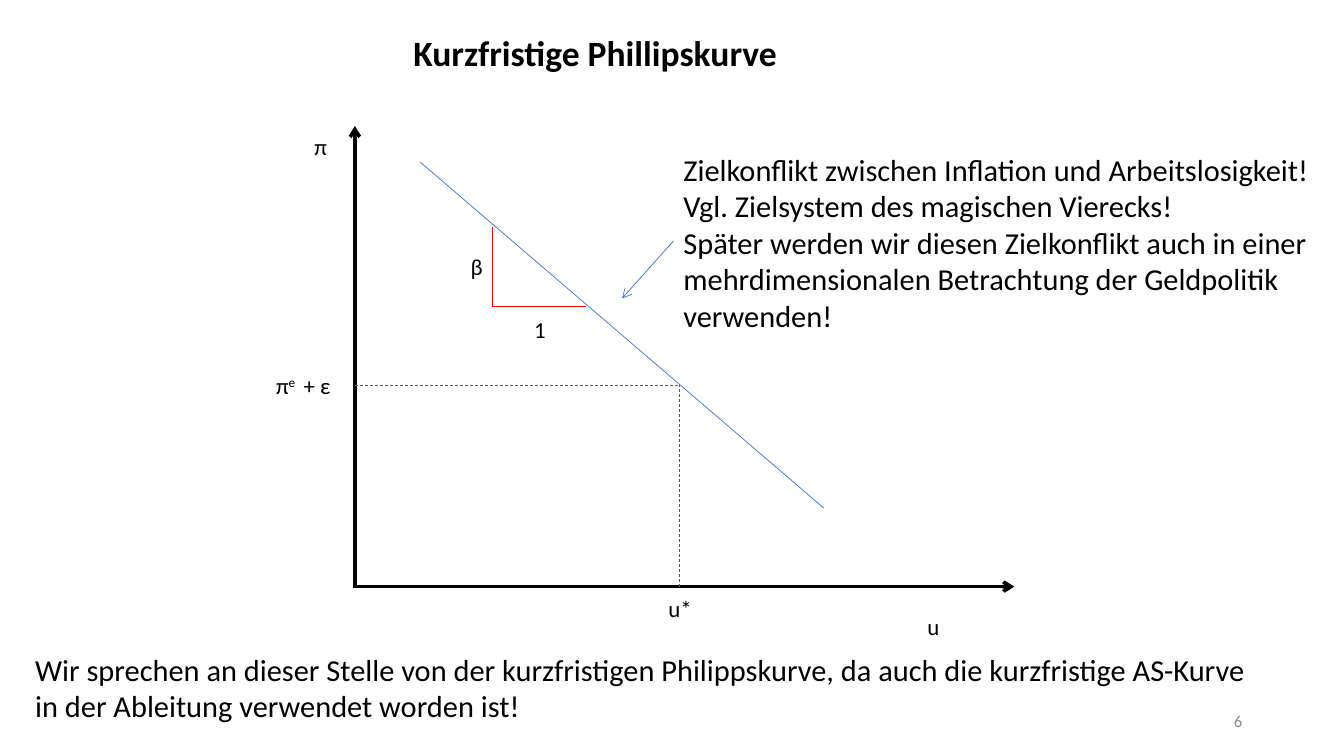
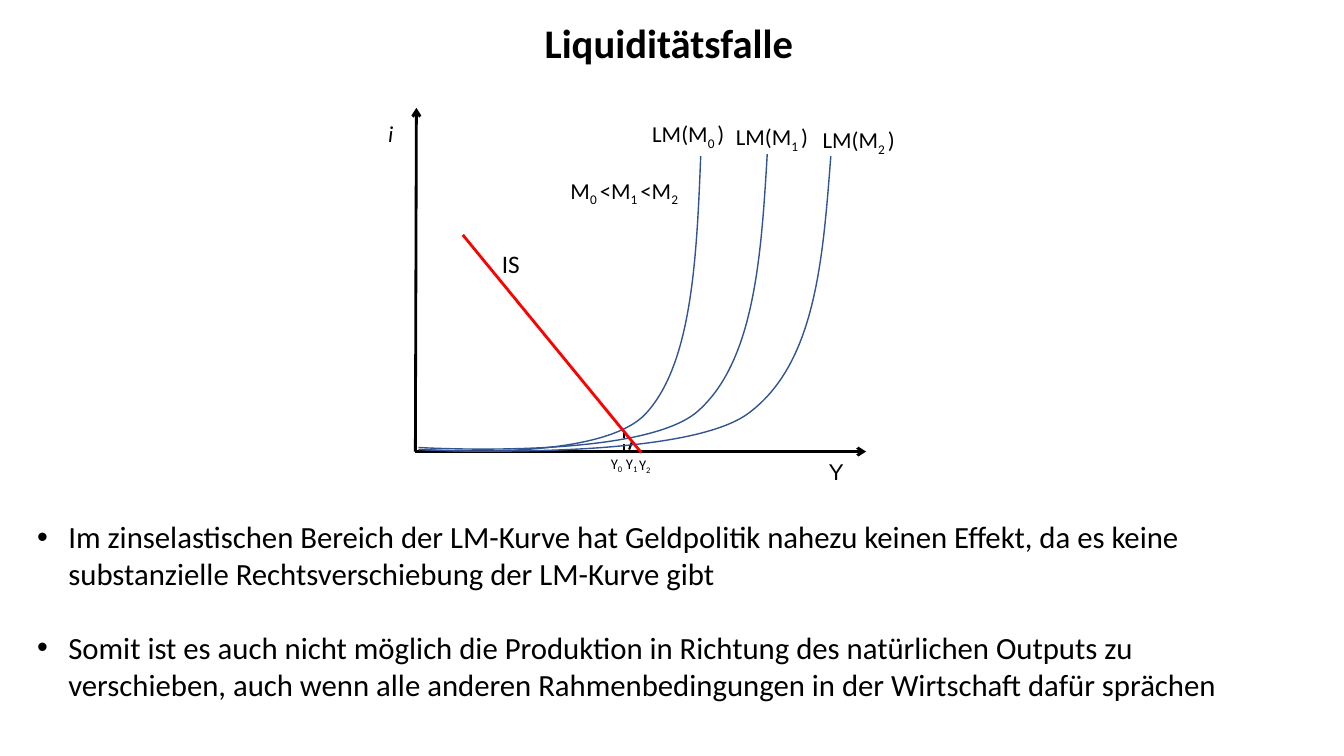
import pptx
import pptx.util
import pptx.dml.color
import pptx.enum.dml
import pptx.enum.shapes
import pptx.enum.text
import pptx.oxml.ns
from lxml import etree

Inches, Pt = pptx.util.Inches, pptx.util.Pt
RGB = pptx.dml.color.RGBColor.from_string
qn = pptx.oxml.ns.qn
ALIGN = pptx.enum.text.PP_ALIGN
HUES = {"ink": "000000", "blue": "4472C4", "navy": "325491", "red": "FF0000",
        "dark": "595959", "gray": "8C8C8C"}
LABEL, BODY = 16.3, 21.7


def text(slide, at, paras, size=LABEL, base=-25, hue="ink", font="Calibri", wrap=False,
         grow=True, bold=False, italic=False, align=ALIGN.LEFT, middle=False, bullet=False):
    """Each paragraph is a list of runs; every second run is raised or lowered by base."""
    frame = slide.shapes.add_textbox(*map(Inches, at)).text_frame
    frame.word_wrap = wrap
    if grow:
        frame.auto_size = pptx.enum.text.MSO_AUTO_SIZE.SHAPE_TO_FIT_TEXT
    if middle:
        frame.vertical_anchor = pptx.enum.text.MSO_ANCHOR.MIDDLE
    for n, runs in enumerate(paras):
        para = frame.add_paragraph() if n else frame.paragraphs[0]
        para.alignment = align
        if bullet:
            props = para._p.get_or_add_pPr()
            props.set("marL", str(Inches(0.31)))
            props.set("indent", str(-Inches(0.31)))
            if n:
                para.space_before = Pt(26)
            etree.SubElement(props, qn("a:buFont")).set("typeface", "Arial")
            etree.SubElement(props, qn("a:buChar")).set("char", "•")
        for k, words in enumerate(runs):
            run = para.add_run()
            run.text = words
            run.font.name, run.font.size = font, Pt(size)
            run.font.bold, run.font.italic = bold, italic
            run.font.color.rgb = RGB(HUES[hue])
            if k % 2:
                run._r.get_or_add_rPr().set("baseline", str(base * 1000))


def line(slide, ends, hue, width, dash=False, arrow=False):
    link = slide.shapes.add_connector(pptx.enum.shapes.MSO_CONNECTOR.STRAIGHT,
                                      *map(Inches, ends))
    link.line.color.rgb = RGB(HUES[hue])
    link.line.width = Pt(width)
    if dash:
        link.line.dash_style = pptx.enum.dml.MSO_LINE.DASH
    props = link._element.spPr
    if arrow:
        etree.SubElement(props.find(qn("a:ln")), qn("a:tailEnd")).set("type", "arrow")
    etree.SubElement(props, qn("a:effectLst"))


deck = pptx.Presentation()
deck.slide_width, deck.slide_height = Inches(13.33), Inches(7.5)
blank = deck.slide_layouts[6]
phil, trap = [deck.slides.add_slide(blank) for _ in range(2)]
for slide, left, top, title, size in [(phil, 1.75, 0.11, "Kurzfristige Phillipskurve", 25.4),
                                      (trap, 2.48, 0.01, "Liquiditätsfalle", 29)]:
    text(slide, (left, top, 8.31, 0.81), [[title]], size, wrap=True, grow=False, bold=True,
         align=ALIGN.CENTER, middle=True)

# Phillips curve
text(phil, (9.42, 6.95, 3, 0.4), [["6"]], 12, hue="gray", wrap=True, grow=False,
     align=ALIGN.RIGHT, middle=True)
for ends in [(3.52, 5.82, 3.52, 1.25), (3.5, 5.82, 10.06, 5.82)]:
    line(phil, ends, "ink", 2.5, arrow=True)
line(phil, (4.17, 1.61, 8.17, 5.04), "blue", 0.5)
for ends in [(4.88, 2.25, 4.88, 3.04), (5.81, 3.04, 4.88, 3.04)]:
    line(phil, ends, "red", 0.5)
for ends in [(3.52, 3.82, 6.74, 3.82), (6.74, 5.82, 6.74, 3.82)]:
    line(phil, ends, "dark", 0.5, dash=True)
line(phil, (6.68, 2.39, 6.17, 2.96), "blue", 0.5, arrow=True)
for left, top, width, runs in [
        (3.02, 1.27, 0.33, ["π"]), (9.1, 6.03, 0.32, ["u"]), (4.57, 2.46, 0.32, ["β"]),
        (5.2, 3.08, 0.31, ["1"]), (2.64, 3.64, 0.78, ["π", "e ", " + ε"]),
        (6.53, 5.85, 0.44, ["u*"])]:
    text(phil, (left, top, width, 0.38), [runs], base=30)
text(phil, (6.68, 1.45, 6.44, 1.88), [
    ["Zielkonflikt zwischen Inflation und Arbeitslosigkeit!"],
    ["Vgl. Zielsystem des magischen Vierecks!"],
    ["Später werden wir diesen Zielkonflikt auch in einer mehrdimensionalen "
     "Betrachtung der Geldpolitik verwenden!"]], BODY, wrap=True, grow=False)
text(phil, (0.25, 6.41, 12.38, 0.84), [
    ["Wir sprechen an dieser Stelle von der kurzfristigen Philippskurve, da auch die "
     "kurzfristige AS-Kurve in der Ableitung verwendet worden ist!"]],
     BODY, wrap=True, grow=False)

# Liquidity trap
for ends in [(4.12, 4.48, 8.59, 4.48), (4.12, 4.48, 4.13, 1.07)]:
    line(trap, ends, "ink", 2, arrow=True)
for ends in [(6.19, 4.49, 6.19, 4.3), (6.24, 4.46, 6.27, 4.38)]:
    line(trap, ends, "ink", 1.5, dash=True)

# Each curve is two Bezier arcs with the same drops below its top
drops = [0, 1.03, 2.07, 2.56, 3.04, 2.91, 2.91]
for top, across in [(1.55, [6.95, 6.91, 6.86, 6.4, 5.94, 4.21, 4.21]),
                    (1.53, [7.61, 7.55, 7.48, 6.91, 6.33, 4.15, 4.15]),
                    (1.55, [8.24, 8.16, 8.09, 7.41, 6.73, 4.15, 4.15])]:
    left = across[-1]
    pen = trap.shapes.build_freeform(Inches(across[0]), Inches(top))
    pen.add_line_segments([(Inches(left), Inches(top + 2.93))], close=False)
    curve = pen.convert_to_shape()
    curve.fill.background()
    curve.line.color.rgb = RGB(HUES["navy"])
    curve.line.width = Pt(1)
    curve.shadow.inherit = False
    route = next(curve._element.iter(qn("a:path")))
    route.remove(route.find(qn("a:lnTo")))
    dots = list(zip(across, drops))
    for first in (1, 4):
        arc = etree.SubElement(route, qn("a:cubicBezTo"))
        for x, y in dots[first:first + 3]:
            dot = etree.SubElement(arc, qn("a:pt"))
            dot.set("x", str(Inches(x - left)))
            dot.set("y", str(Inches(y)))

line(trap, (4.59, 2.33, 6.36, 4.49), "red", 2)
text(trap, (3.75, 1.14, 0.25, 0.38), [["i"]], italic=True)
text(trap, (8.12, 4.49, 0.35, 0.38), [["Y"]], font="Arial")
text(trap, (4.88, 2.41, 0.38, 0.4), [["IS"]], 18)
text(trap, (5.56, 1.7, 1.32, 0.38), [["M", "0 ", "<M", "1 ", "<M", "2"]])
for n, (left, top) in enumerate([(6.37, 1.14), (7.2, 1.17), (8.06, 1.2)]):
    text(trap, (left, top, 0.94, 0.38), [["LM(M", f"{n} ", ")"]])
for n, (left, top, width) in enumerate([(5.96, 4.46, 0.57), (6.11, 4.46, 0.32),
                                        (6.24, 4.47, 0.4)]):
    text(trap, (left, top, width, 0.28), [["Y", str(n)]], 10.5, wrap=True)
text(trap, (0.27, 5.09, 12.23, 1.95), [
    ["Im zinselastischen Bereich der LM-Kurve hat Geldpolitik nahezu keinen Effekt, "
     "da es keine substanzielle Rechtsverschiebung der LM-Kurve gibt"],
    ["Somit ist es auch nicht möglich die Produktion in Richtung des natürlichen Outputs "
     "zu verschieben, auch wenn alle anderen Rahmenbedingungen in der Wirtschaft dafür "
     "sprächen"]], 22, wrap=True, bullet=True)

deck.save("out.pptx")
